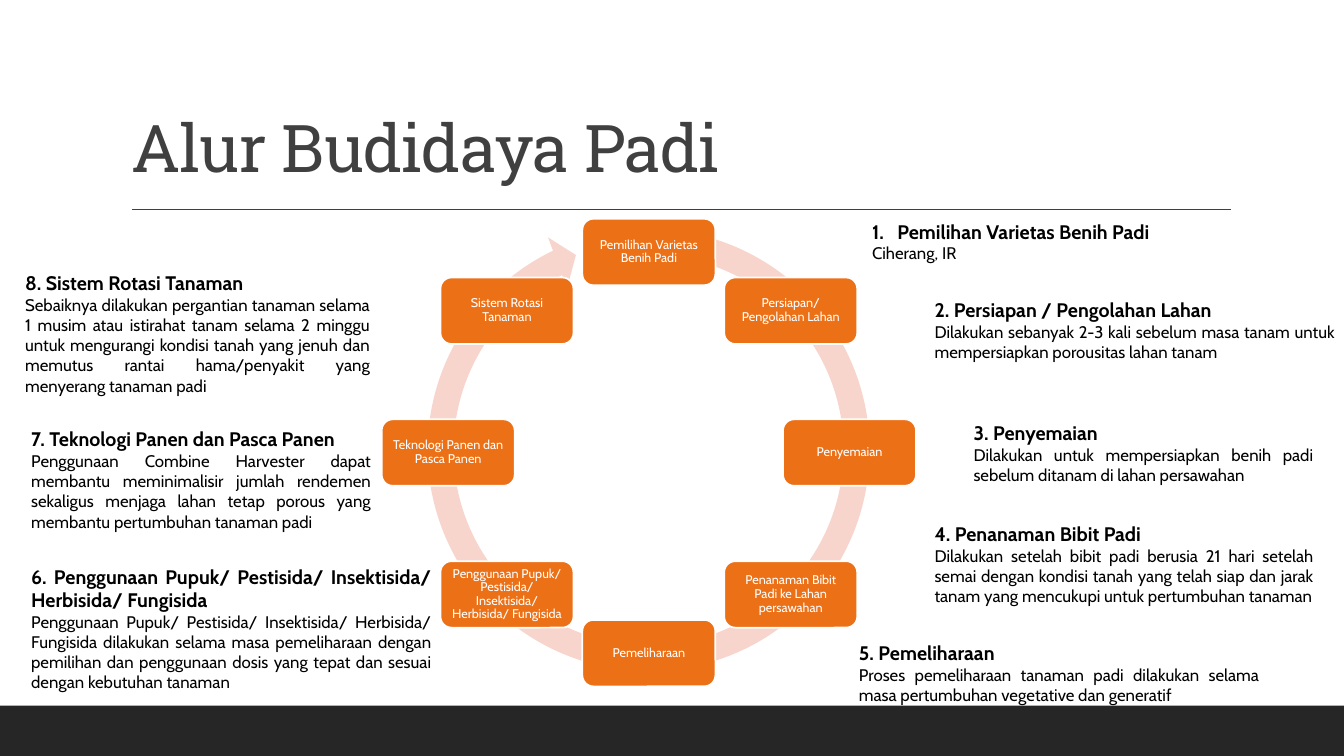
import math
import lxml.etree
import pptx
import pptx.chart.data
import pptx.dml.color
import pptx.enum.shapes
import pptx.enum.text
import pptx.oxml.ns
import pptx.util

WIDE = pptx.util.Inches(13.33)
HIGH = pptx.util.Inches(7.5)
HUES = {"bar": "262626", "title": "404040", "ring": "F8D5CC",
        "node": "EC7016", "white": "FFFFFF", "text": "000000"}
FORM = pptx.enum.shapes.MSO_SHAPE
ALIGN = pptx.enum.text.PP_ALIGN
ANCHOR = pptx.enum.text.MSO_ANCHOR
FIT = pptx.enum.text.MSO_AUTO_SIZE

HEAD = {"name": "Roboto Slab", "size": pptx.util.Pt(47), "bold": False}
LABEL = {"name": "Cabin", "size": pptx.util.Pt(9)}
TOPIC = {"name": "Cabin", "size": pptx.util.Pt(14), "bold": True}
BODY = {"name": "Cabin", "size": pptx.util.Pt(12), "bold": False}
INSET = dict.fromkeys(("margin_left", "margin_right", "margin_top", "margin_bottom"),
                      pptx.util.Inches(0.07))

STEPS = [
    "Pemilihan Varietas Benih Padi",
    "Persiapan/ Pengolahan Lahan",
    "Penyemaian",
    "Penanaman Bibit Padi ke Lahan persawahan",
    "Pemeliharaan",
    "Penggunaan Pupuk/ Pestisida/ Insektisida/ Herbisida/ Fungisida",
    "Teknologi Panen dan Pasca Panen",
    "Sistem Rotasi Tanaman",
]

NOTES = [
    ((64.15, 28.4, 31.28, 7.2), "Pemilihan Varietas Benih Padi", "Ciherang, IR"),
    ((68.8, 38.8, 31.28, 9.87), "2. Persiapan / Pengolahan Lahan",
     "Dilakukan sebanyak 2-3 kali sebelum masa tanam untuk mempersiapkan "
     "porousitas lahan tanam"),
    ((71.7, 55.07, 26.78, 9.87), "3. Penyemaian",
     "Dilakukan untuk mempersiapkan benih padi sebelum ditanam di lahan persawahan"),
    ((68.8, 68.4, 29.7, 15.2), "4. Penanaman Bibit Padi",
     "Dilakukan setelah bibit padi berusia 21 hari setelah semai dengan kondisi "
     "tanah yang telah siap dan jarak tanam yang mencukupi untuk pertumbuhan tanaman"),
    ((63.17, 84.13, 31.28, 9.87), "5. Pemeliharaan",
     "Proses pemeliharaan tanaman padi dilakukan selama masa pertumbuhan "
     "vegetative dan generatif"),
    ((1.58, 74, 31.28, 18.4),
     "6. Penggunaan Pupuk/ Pestisida/ Insektisida/ Herbisida/ Fungisida",
     "Penggunaan Pupuk/ Pestisida/ Insektisida/ Herbisida/ Fungisida dilakukan "
     "selama masa pemeliharaan dengan pemilihan dan penggunaan dosis yang tepat "
     "dan sesuai dengan kebutuhan tanaman"),
    ((1.58, 55.87, 26.78, 15.2), "7. Teknologi Panen dan Pasca Panen",
     "Penggunaan Combine Harvester dapat membantu meminimalisir jumlah rendemen "
     "sekaligus menjaga lahan tetap porous yang membantu pertumbuhan tanaman padi"),
    ((1.13, 35.2, 27.16, 18), "8. Sistem Rotasi Tanaman",
     "Sebaiknya dilakukan pergantian tanaman selama 1 musim atau istirahat tanam "
     "selama 2 minggu untuk mengurangi kondisi tanah yang jenuh dan memutus rantai "
     "hama/penyakit yang menyerang tanaman padi"),
]


def place(*share):
    return [round(part * side / 100) for part, side in zip(share, (WIDE, HIGH) * 2)]


def hue(name):
    return pptx.dml.color.RGBColor.from_string(HUES[name])


def apply(item, form):
    for key, value in form.items():
        setattr(item, key, value)


def write(para, text, form, tint, **look):
    run = para.add_run()
    run.text = text
    apply(run.font, form)
    run.font.color.rgb = hue(tint)
    apply(para, look)
    return run


def add_form(slide, kind, box, tint):
    shape = slide.shapes.add_shape(kind, *place(*box))
    shape.shadow.inherit = False
    shape.fill.solid()
    shape.fill.fore_color.rgb = hue(tint)
    shape.line.fill.background()
    return shape


def add_title(slide, text):
    title = slide.shapes.title
    apply(title, dict(zip(("left", "top", "width", "height"),
                          place(9, 4.13, 82.5, 21.2))))
    apply(title.text_frame, {"vertical_anchor": ANCHOR.BOTTOM, "word_wrap": True,
                             "auto_size": FIT.NONE})
    run = write(title.text_frame.paragraphs[0], text, HEAD, "title",
                alignment=ALIGN.LEFT, line_spacing=0.9)
    run.font._element.set("spc", "-50")


def add_rule(slide):
    line = slide.shapes.add_connector(pptx.enum.shapes.MSO_CONNECTOR.STRAIGHT,
                                      *place(9.83, 27.73, 91.6, 27.73))
    line.line.color.rgb = hue("title")
    line.line.width = pptx.util.Pt(1)
    lxml.etree.SubElement(line._element.spPr, pptx.oxml.ns.qn("a:effectLst"))


def add_ring(slide):
    ring = add_form(slide, FORM.CIRCULAR_ARROW, (30.75, 28.4, 35.02, 62.27), "ring")
    for rank, value in enumerate((0.055, 3.307, 146.432, 168.777, 0.058)):
        ring.adjustments[rank] = value


def add_node(slide, rank, text):
    turn = math.tau * rank / len(STEPS)
    left = 48.28 + 14.93 * math.sin(turn) - 9.9 / 2
    top = 59.87 - 26.53 * math.cos(turn) - 8.8 / 2
    node = add_form(slide, FORM.ROUNDED_RECTANGLE, (left, top, 9.9, 8.8), "node")
    node.line.color.rgb = hue("white")
    node.line.width = pptx.util.Pt(1.25)
    frame = node.text_frame
    apply(frame, {**INSET, "word_wrap": True, "vertical_anchor": ANCHOR.MIDDLE})
    write(frame.paragraphs[0], text, LABEL, "white",
          alignment=ALIGN.CENTER, line_spacing=0.9)


def add_note(slide, box, topic, body):
    frame = slide.shapes.add_textbox(*place(*box)).text_frame
    apply(frame, {"word_wrap": True, "auto_size": FIT.SHAPE_TO_FIT_TEXT})
    write(frame.paragraphs[0], topic, TOPIC, "text", alignment=ALIGN.JUSTIFY)
    write(frame.add_paragraph(), body, BODY, "text", alignment=ALIGN.JUSTIFY)
    return frame.paragraphs[0]


def number(para):
    props = para._p.get_or_add_pPr()
    dent = pptx.util.Inches(0.25)
    props.set("marL", str(dent))
    props.set("indent", str(-dent))
    mark = lxml.etree.SubElement(props, pptx.oxml.ns.qn("a:buAutoNum"))
    mark.set("type", "arabicPeriod")


def main():
    deck = pptx.Presentation()
    apply(deck, {"slide_width": WIDE, "slide_height": HIGH})
    slide = deck.slides.add_slide(deck.slide_layouts.get_by_name("Title Only"))
    add_form(slide, FORM.RECTANGLE, (0, 93.33, 100, 6.67), "bar")
    add_rule(slide)
    add_title(slide, "Alur Budidaya Padi")
    add_ring(slide)
    for rank, text in enumerate(STEPS):
        add_node(slide, rank, text)
    heads = [add_note(slide, *note) for note in NOTES]
    number(heads[0])
    deck.save("out.pptx")


if __name__ == "__main__":
    main()
